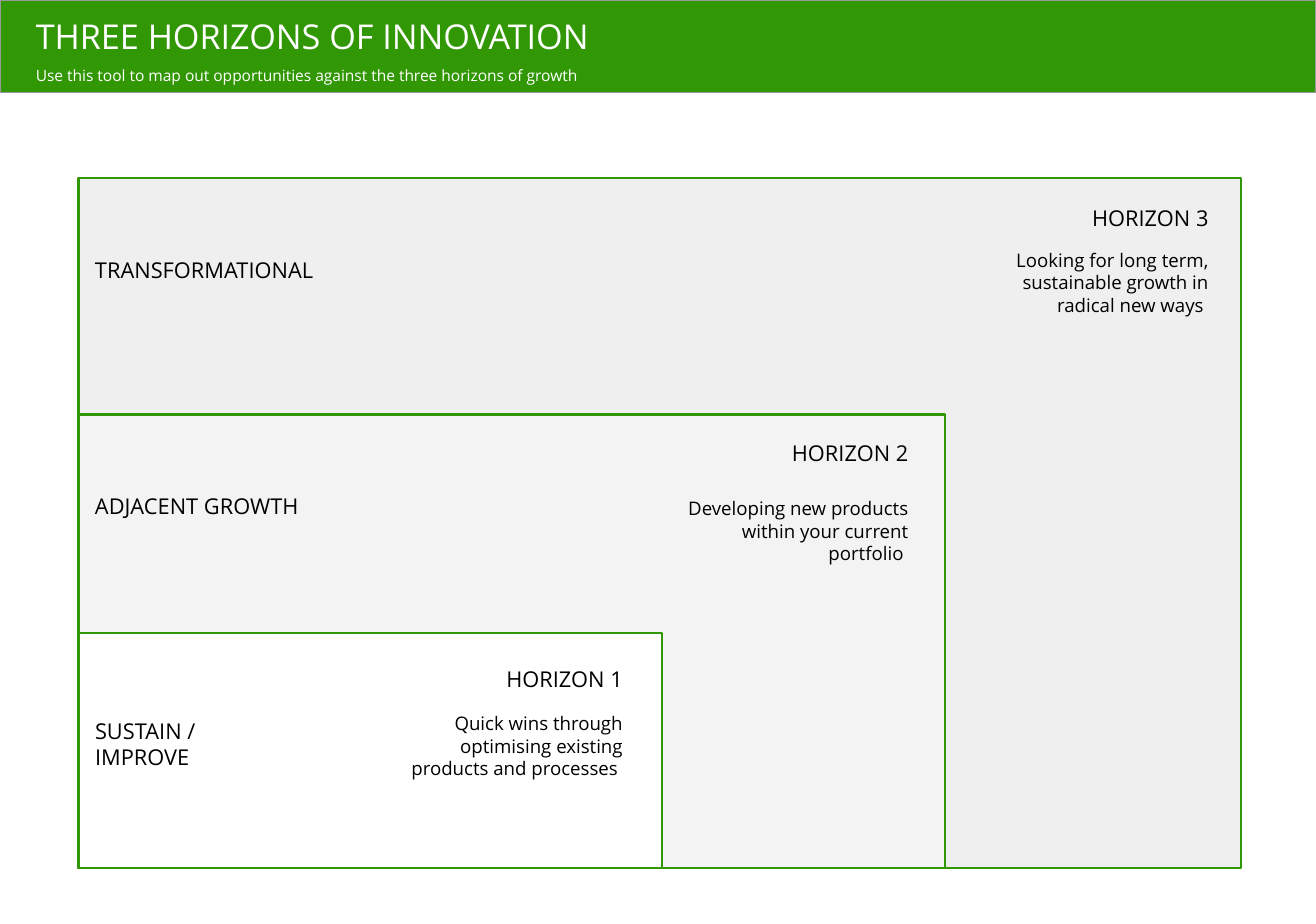
import pptx
import pptx.dml.color
import pptx.enum.shapes
import pptx.enum.text
import pptx.util

Inches = pptx.util.Inches
Pt = pptx.util.Pt
RIGHT = pptx.enum.text.PP_ALIGN.RIGHT

THEME = {
    "font": "Open Sans",
    "green": "319704", "edge": "999999", "ink": "000000", "white": "FFFFFF",
    "title": 22, "sub": 10, "head": 14, "note": 12,
    "gap": 16.7, "line": 1.5, "thin": 0.75,
}
WIDTH, HEIGHT = 11.75, 8.25
LEFT, BASE = 0.7, 7.75
INSET, NOTE_W, NOTE_H = 0.05, 2.19, 0.81

TITLE = "THREE HORIZONS OF INNOVATION"
SUB = "Use this tool to map out opportunities against the three horizons of growth"
ZONES = [
    {"name": "HORIZON 3", "kind": ["TRANSFORMATIONAL"],
     "note": "Looking for long term, sustainable growth in radical new ways ",
     "fill": "EFEFEF", "top": 1.59, "width": 10.38,
     "edge": 10.89, "head": 1.73, "low": 2.12},
    {"name": "HORIZON 2", "kind": ["ADJACENT GROWTH"],
     "note": "Developing new products within your current portfolio ",
     "fill": "F3F3F3", "top": 3.7, "width": 7.74,
     "edge": 8.21, "head": 3.83, "low": 4.34},
    {"name": "HORIZON 1", "kind": ["SUSTAIN /", "IMPROVE"],
     "note": "Quick wins through optimising existing products and processes ",
     "fill": "FFFFFF", "top": 5.65, "width": 5.21,
     "edge": 5.66, "head": 5.84, "low": 6.26},
]


def tint(code):
    return pptx.dml.color.RGBColor.from_string(code)


def add_box(slide, place, fill, line, weight):
    box = slide.shapes.add_shape(
        pptx.enum.shapes.MSO_SHAPE.RECTANGLE, *map(Inches, place))
    box.shadow.inherit = False
    box.fill.solid()
    box.fill.fore_color.rgb = tint(fill)
    box.line.color.rgb = tint(line)
    box.line.width = Pt(weight)


def add_text(slide, place, lines, sizes, ink, pad=0.1):
    frame = slide.shapes.add_textbox(*map(Inches, place)).text_frame
    frame.word_wrap = True
    frame.auto_size = pptx.enum.text.MSO_AUTO_SIZE.SHAPE_TO_FIT_TEXT
    frame.margin_left = frame.margin_right = Inches(pad)
    frame.margin_top = frame.margin_bottom = Inches(pad)
    frame.text = "\n".join(lines)
    for para, size in zip(frame.paragraphs, sizes):
        for run in para.runs:
            run.font.name = THEME["font"]
            run.font.size = Pt(size)
            run.font.color.rgb = tint(ink)
    return frame.paragraphs


def add_head(slide, zone):
    lines = [zone["name"]] + zone["kind"]
    left = LEFT + INSET
    place = (left, zone["head"], zone["edge"] - left, 0.45 + 0.23 * len(lines))
    paras = add_text(slide, place, lines, [THEME["head"]] * len(lines), THEME["ink"])
    paras[0].alignment = RIGHT
    paras[1].space_before = Pt(THEME["gap"])


def add_note(slide, zone):
    place = (zone["edge"] - NOTE_W, zone["low"], NOTE_W, NOTE_H)
    paras = add_text(slide, place, [zone["note"]], [THEME["note"]], THEME["ink"])
    paras[0].alignment = RIGHT


def add_banner(slide):
    add_box(slide, (0, 0, WIDTH, 0.83), THEME["green"], THEME["edge"], THEME["thin"])
    paras = add_text(slide, (0.21, 0.03, 6.57, 1.25), [TITLE, SUB],
                     [THEME["title"], THEME["sub"]], THEME["white"], 0.11)
    paras[1].line_spacing = 1.5


def main():
    deck = pptx.Presentation()
    deck.slide_width, deck.slide_height = Inches(WIDTH), Inches(HEIGHT)
    slide = deck.slides.add_slide(deck.slide_layouts[6])
    for zone in ZONES:
        place = (LEFT, zone["top"], zone["width"], BASE - zone["top"])
        add_box(slide, place, zone["fill"], THEME["green"], THEME["line"])
    for zone in ZONES:
        add_head(slide, zone)
        add_note(slide, zone)
    add_banner(slide)
    deck.save("out.pptx")


if __name__ == "__main__":
    main()
